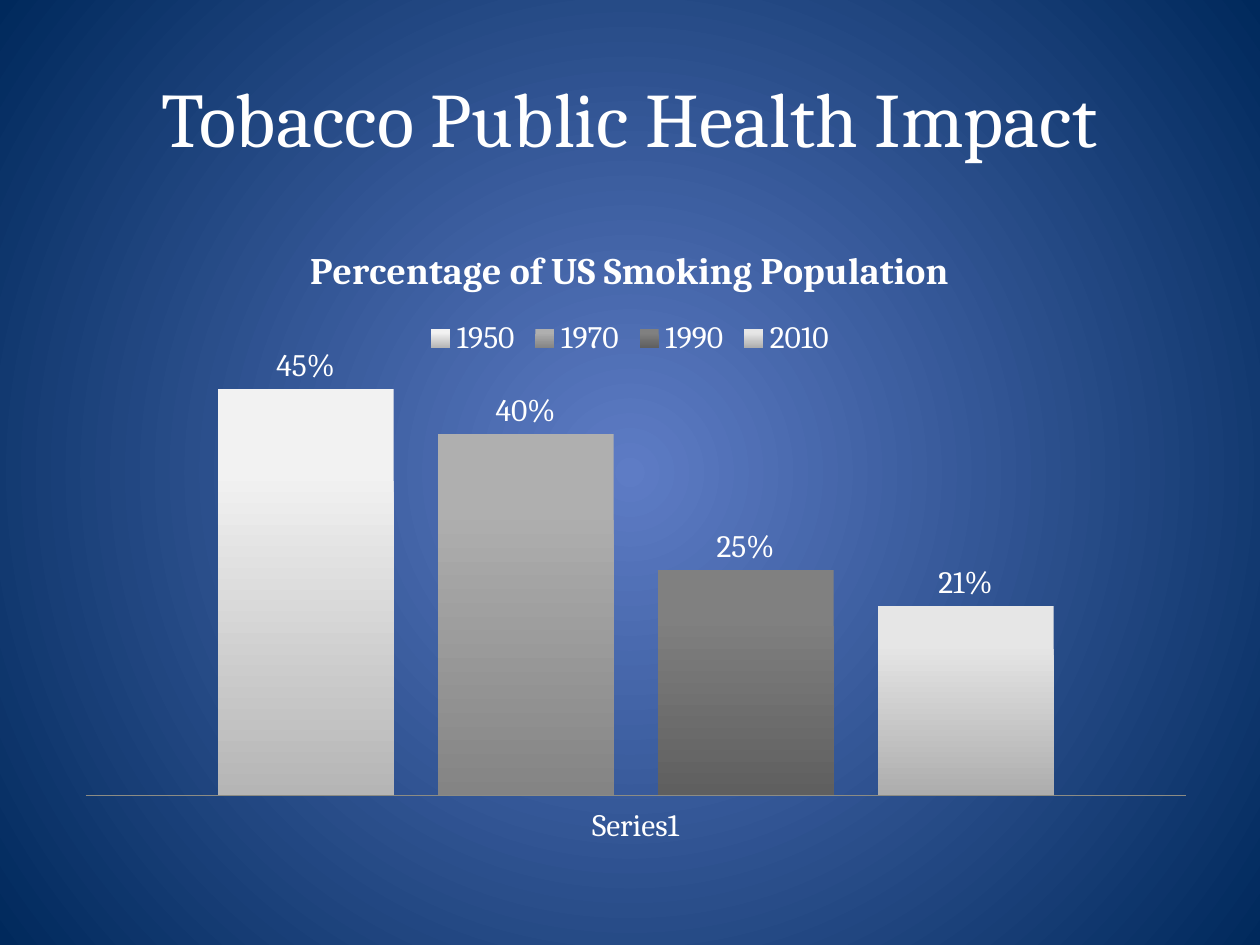
from pptx import Presentation
from pptx.chart.data import CategoryChartData
from pptx.dml.color import RGBColor
from pptx.enum.chart import (XL_CHART_TYPE, XL_LABEL_POSITION, XL_LEGEND_POSITION,
                             XL_TICK_LABEL_POSITION, XL_TICK_MARK)
from pptx.enum.text import MSO_ANCHOR, PP_ALIGN
from pptx.oxml import parse_xml
from pptx.oxml.ns import nsdecls, qn
from pptx.util import Inches, Pt

THEME = {
    "font": "Cambria",
    "text": RGBColor.from_string("FFFFFF"),
    "axis": RGBColor.from_string("8C8C84"),
    "background": ("5E7CC5", "00295C"),
    "title": Pt(44),
    "chart_title": Pt(21.6),
    "chart_text": Pt(18),
}
SMOKING_RATES = [
    ("1950", 0.45, ("F2F2F2", "B5B5B5")),
    ("1970", 0.40, ("AFAFAF", "848484")),
    ("1990", 0.25, ("808080", "5F5F5F")),
    ("2010", 0.21, ("E6E6E6", "ADADAD")),
]
PLOT_LAYOUT = {"x": 0.02, "y": 0.2, "w": 0.97, "h": 0.73}


def set_attributes(target, values):
    for name, value in values.items():
        setattr(target, name, value)


def set_gradient(fill, colors, start):
    fill.gradient()
    for stop, color, position in zip(fill.gradient_stops, colors, (start, 1)):
        stop.color.rgb = RGBColor.from_string(color)
        stop.position = position


presentation = Presentation()
set_attributes(presentation, {"slide_width": Inches(10), "slide_height": Inches(7.5)})
slide = presentation.slides.add_slide(presentation.slide_layouts[6])

set_gradient(slide.background.fill, THEME["background"], 0)
gradient = slide.element.find(".//" + qn("a:gradFill"))
gradient.replace(gradient.find(qn("a:lin")), parse_xml(
    f'<a:path {nsdecls("a")} path="circle">'
    '<a:fillToRect l="50000" t="50000" r="50000" b="50000"/></a:path>'))

title_box = slide.shapes.add_textbox(Inches(0.5), Inches(0.3), Inches(9), Inches(1.25))
set_attributes(title_box.text_frame, {"word_wrap": True, "vertical_anchor": MSO_ANCHOR.MIDDLE})
paragraph = title_box.text_frame.paragraphs[0]
set_attributes(paragraph, {"text": "Tobacco Public Health Impact", "alignment": PP_ALIGN.CENTER})
set_attributes(paragraph.runs[0].font, {"name": THEME["font"], "size": THEME["title"]})
paragraph.runs[0].font.color.rgb = THEME["text"]

chart_data = CategoryChartData(number_format="0%")
chart_data.categories = ["Series1"]
for year, rate, colors in SMOKING_RATES:
    chart_data.add_series(year, [rate])
chart = slide.shapes.add_chart(
    XL_CHART_TYPE.COLUMN_CLUSTERED, Inches(0.5), Inches(1.75), Inches(9), Inches(4.95),
    chart_data).chart
set_attributes(chart.font, {"name": THEME["font"], "size": THEME["chart_text"]})
chart.font.color.rgb = THEME["text"]

chart_title = chart.chart_title.text_frame
chart_title.text = "Percentage of US Smoking Population"
title_font = chart_title.paragraphs[0].runs[0].font
set_attributes(title_font, {"name": THEME["font"], "size": THEME["chart_title"], "bold": True})
title_font.color.rgb = THEME["text"]

chart.has_legend = True
set_attributes(chart.legend, {"position": XL_LEGEND_POSITION.TOP, "include_in_layout": False})
set_attributes(chart.category_axis, {
    "major_tick_mark": XL_TICK_MARK.NONE,
    "tick_label_position": XL_TICK_LABEL_POSITION.LOW,
})
set_attributes(chart.category_axis.format.line, {"width": Pt(1)})
chart.category_axis.format.line.color.rgb = THEME["axis"]
set_attributes(chart.value_axis, {
    "visible": False,
    "has_major_gridlines": False,
    "minimum_scale": 0,
    "maximum_scale": 0.5,
})

plot = chart.plots[0]
set_attributes(plot, {
    "gap_width": 150, "overlap": -25, "vary_by_categories": False, "has_data_labels": True,
})
set_attributes(plot.data_labels, {
    "show_value": True,
    "number_format": "0%",
    "number_format_is_linked": False,
    "position": XL_LABEL_POSITION.OUTSIDE_END,
})
for series, (year, rate, colors) in zip(plot.series, SMOKING_RATES):
    set_gradient(series.format.fill, colors, 0.2)
    series.format.fill.gradient_angle = 270

plot_area = chart.element.find(".//" + qn("c:plotArea"))
for layout in plot_area.findall(qn("c:layout")):
    plot_area.remove(layout)
sizes = "".join(f'<c:{side} val="{value}"/>' for side, value in PLOT_LAYOUT.items())
plot_area.insert(0, parse_xml(
    f'<c:layout {nsdecls("c")}><c:manualLayout><c:layoutTarget val="inner"/>'
    f'<c:xMode val="edge"/><c:yMode val="edge"/>{sizes}</c:manualLayout></c:layout>'))

presentation.save("out.pptx")
